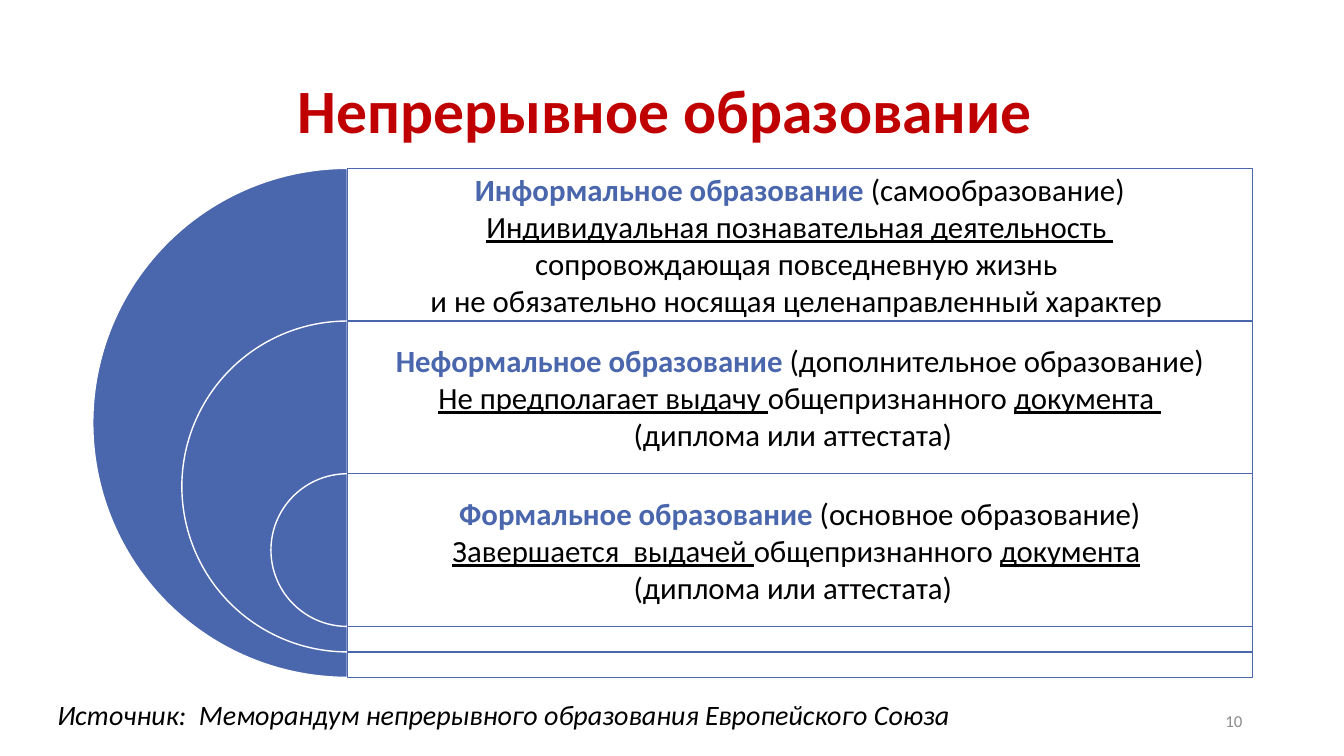
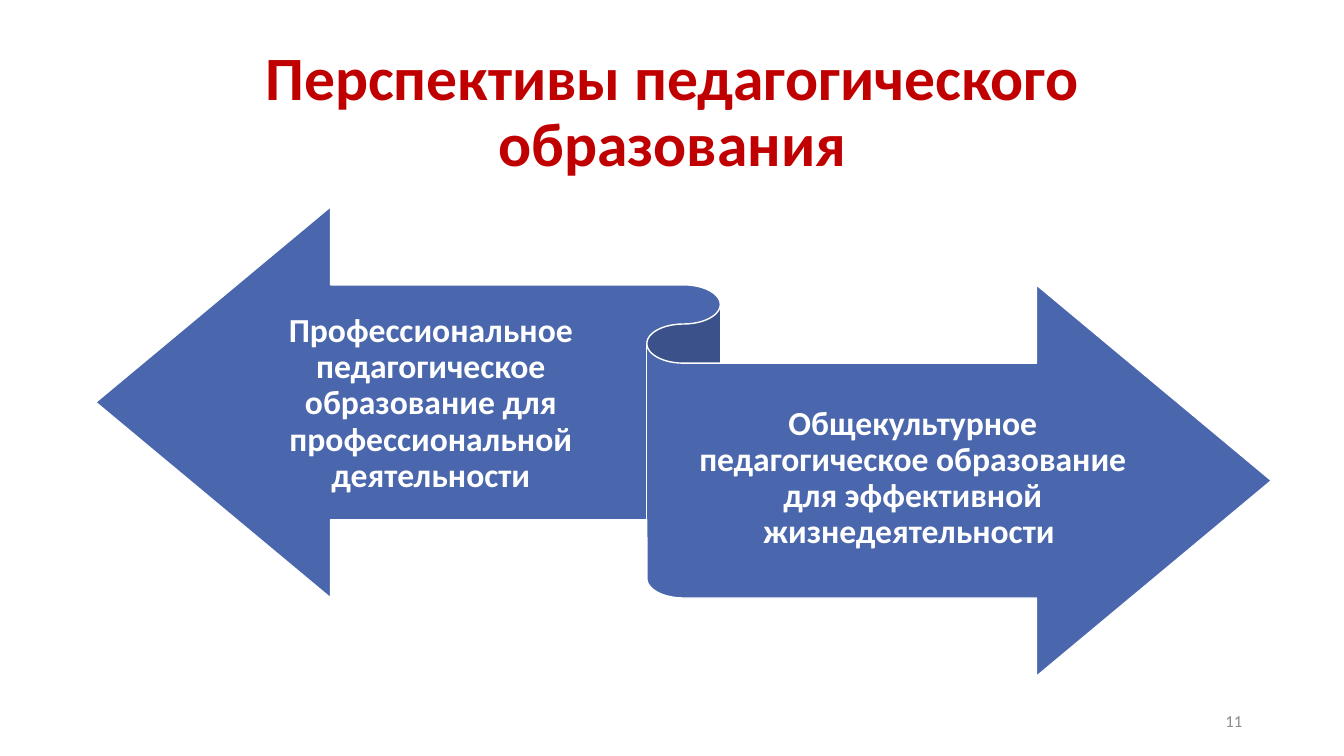
from lxml import etree
from pptx import Presentation
from pptx.dml.color import RGBColor
from pptx.enum.shapes import MSO_SHAPE
from pptx.enum.text import MSO_ANCHOR, PP_ALIGN
from pptx.oxml.ns import qn
from pptx.util import Inches, Pt

PIE, RECTANGLE, RIBBON = MSO_SHAPE.PIE, MSO_SHAPE.RECTANGLE, MSO_SHAPE.LEFT_RIGHT_RIBBON
LEFT, CENTER, RIGHT = PP_ALIGN.LEFT, PP_ALIGN.CENTER, PP_ALIGN.RIGHT
TOP, MIDDLE = MSO_ANCHOR.TOP, MSO_ANCHOR.MIDDLE

FONT = "Calibri"
RED, BLUE, WHITE, BLACK, GRAY = "C00000", "4A66AC", "FFFFFF", "000000", "8C8C8C"
TITLE_BOX = (0.92, 0.4, 11.5, 1.45)
NUMBER_BOX = (9.42, 6.95, 3, 0.4)

TERM = {"bold": True, "color": BLUE}
PLAIN = {}
UNDERLINED = {"underline": True}

LEVELS = [
    [
        [("Информальное образование ", TERM), ("(самообразование)", PLAIN)],
        [("Индивидуальная познавательная деятельность ", UNDERLINED)],
        [("сопровождающая повседневную жизнь ", PLAIN)],
        [("и не обязательно носящая целенаправленный характер ", PLAIN)],
    ],
    [
        [("Неформальное образование ", TERM), ("(дополнительное образование)", PLAIN)],
        [("Не предполагает выдачу ", UNDERLINED), ("общепризнанного ", PLAIN), ("документа ", UNDERLINED)],
        [("(диплома или аттестата)  ", PLAIN)],
    ],
    [
        [("Формальное образование ", TERM), ("(основное образование)", PLAIN)],
        [("Завершается  выдачей ", UNDERLINED), ("общепризнанного ", PLAIN), ("документа", UNDERLINED), (" ", PLAIN)],
        [("(диплома или аттестата)  ", PLAIN)],
    ],
]


def rgb(color):
    return RGBColor.from_string(color)


def inches(box):
    return [Inches(length) for length in box]


def add_text(page, box, paragraphs, size, color=BLACK, bold=False, italic=False,
             align=CENTER, anchor=MIDDLE, spacing=1.0, insets=(0.1, 0.05, 0.1, 0.05)):
    frame = page.shapes.add_textbox(*inches(box)).text_frame
    frame.word_wrap = True
    frame.vertical_anchor = anchor
    (frame.margin_left, frame.margin_top,
     frame.margin_right, frame.margin_bottom) = inches(insets)
    for index, pieces in enumerate(paragraphs):
        para = frame.add_paragraph() if index else frame.paragraphs[0]
        para.alignment = align
        para.line_spacing = spacing
        for text, style in pieces:
            span = para.add_run()
            span.text = text
            font = span.font
            font.name = FONT
            font.size = Pt(size)
            font.bold = style.get("bold", bold)
            font.italic = italic
            font.underline = style.get("underline", False)
            font.color.rgb = rgb(style.get("color", color))


def add_figure(page, kind, box, fill, line, opacity=100):
    figure = page.shapes.add_shape(kind, *inches(box))
    figure.shadow.inherit = False
    figure.fill.solid()
    figure.fill.fore_color.rgb = rgb(fill)
    figure.line.color.rgb = rgb(line)
    figure.line.width = Pt(1)
    if opacity < 100:
        solid = figure.element.spPr.find(qn("a:solidFill"))
        etree.SubElement(solid[0], qn("a:alpha"), val=str(opacity * 1000))
    return figure


def add_page(deck, title, number):
    page = deck.slides.add_slide(deck.slide_layouts[6])
    add_text(page, TITLE_BOX, [[(title, PLAIN)]], 44, RED, bold=True, spacing=0.9)
    add_text(page, NUMBER_BOX, [[(str(number), PLAIN)]], 12, GRAY, align=RIGHT)
    return page


def add_nested_levels(page, box, levels):
    left, top, width, height = box
    center = left + height / 2
    band_width = left + width - center
    band_height = height * 0.3
    bottom_step = (height - band_height * len(levels)) / (len(levels) - 1)
    for index, paragraphs in enumerate(levels):
        band_top = top + index * band_height
        diameter = height - index * (band_height + bottom_step)
        half = add_figure(page, PIE, (center - diameter / 2, band_top, diameter, diameter), BLUE, WHITE)
        half.adjustments[0] = 54
        half.adjustments[1] = 162
        add_figure(page, RECTANGLE, (center, band_top, band_width, diameter), WHITE, BLUE, opacity=90)
        add_text(page, (center, band_top, band_width, band_height), paragraphs, 22, insets=(0.09,) * 4)


def add_ribbon(page, box, left_text, right_text):
    left, top, width, height = box
    add_figure(page, RIBBON, box, BLUE, WHITE)
    text_height = height * 0.49
    left_box = (left + width * 0.12, top + height * 0.176, width * 0.33, text_height)
    right_box = (left + width * 0.5, top + height * 0.335, width * 0.39, text_height)
    for text_box, text in ((left_box, left_text), (right_box, right_text)):
        add_text(page, text_box, [[(text, PLAIN)]], 24, WHITE, bold=True,
                 spacing=0.9, insets=(0, 0.09, 0, 0.1))


def build_lifelong_page(deck):
    page = add_page(deck, "Непрерывное образование ", 10)
    add_nested_levels(page, (0.92, 1.67, 11.5, 5.05), LEVELS)
    source = "Источник:  Меморандум непрерывного образования Европейского Союза"
    add_text(page, (0.47, 6.87, 10.34, 0.44), [[(source, PLAIN)]], 20,
             italic=True, align=LEFT, anchor=TOP)


def build_prospects_page(deck):
    page = add_page(deck, "Перспективы педагогического образования", 11)
    add_ribbon(page, (0.95, 2.05, 11.66, 4.66),
               "Профессиональное педагогическое образование для профессиональной деятельности",
               "Общекультурное педагогическое образование для эффективной жизнедеятельности ")


def main():
    deck = Presentation()
    deck.slide_width = Inches(13.33)
    deck.slide_height = Inches(7.5)
    build_lifelong_page(deck)
    build_prospects_page(deck)
    deck.save("out.pptx")


if __name__ == "__main__":
    main()
